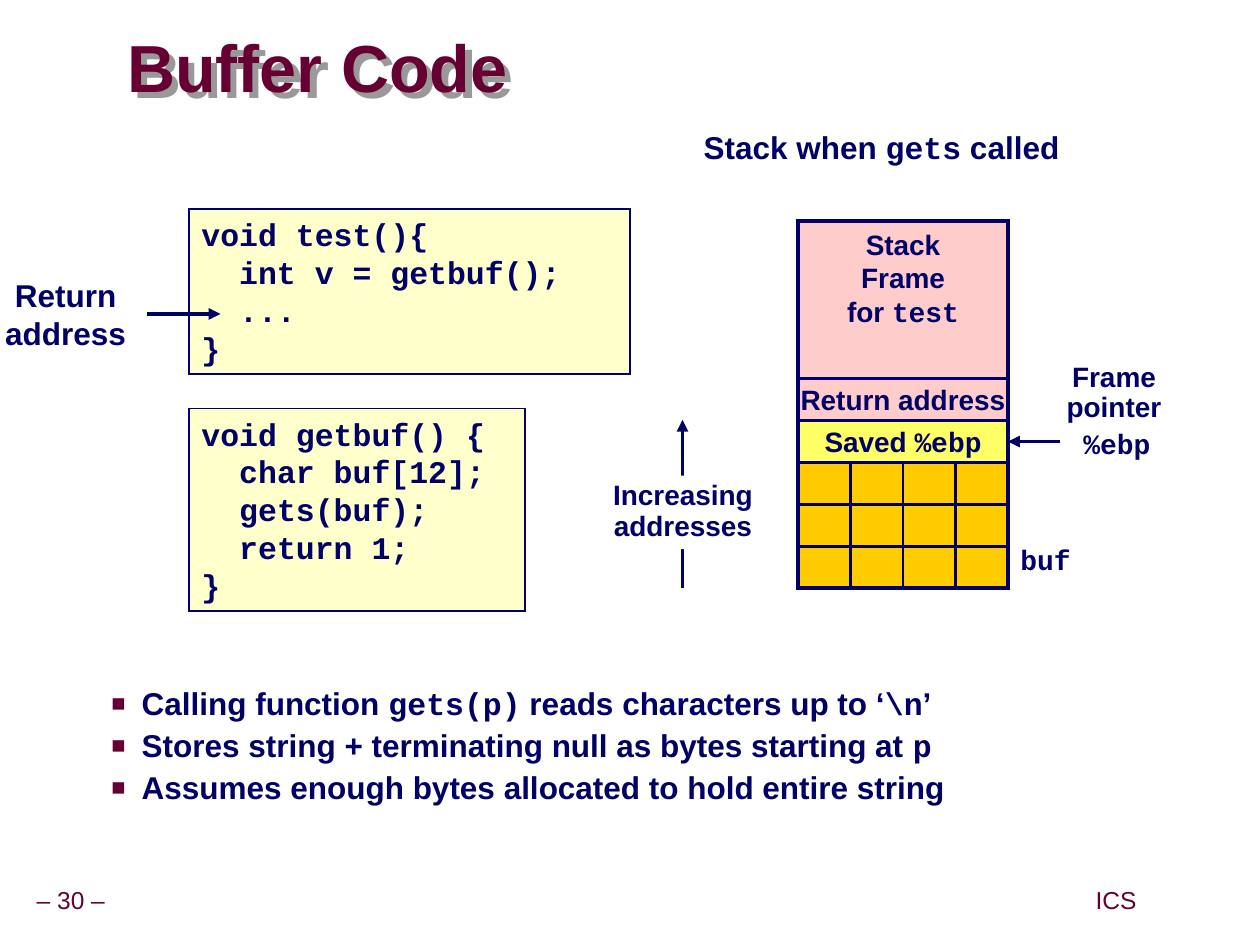
import itertools
from dataclasses import dataclass
from typing import Optional

import pptx
import pptx.dml.color
import pptx.enum.shapes
import pptx.enum.text
import pptx.oxml
import pptx.oxml.ns
import pptx.util

Align = pptx.enum.text.PP_ALIGN
Anchor = pptx.enum.text.MSO_ANCHOR
A_NS = pptx.oxml.ns.nsdecls("a")

COLORS = {
    "navy": "000066", "maroon": "660033", "cream": "FFFFCC", "pink": "FFCCCC",
    "yellow": "FFFF66", "gold": "FFCC00", "white": "FFFFFF", "gray": "999999",
}
SANS, MONO = "Arial", "Courier New"

# The slide is a grid of 120 columns by 90 rows
COLUMNS, ROWS = 120, 90
WIDTH, HEIGHT = pptx.util.Inches(10), pptx.util.Inches(7.5)


@dataclass
class Block:
    """A box on the grid; text between backticks is set in the code font."""
    left: float
    top: float
    width: float
    height: float
    text: str = ""
    size: float = 16
    color: str = "navy"
    bold: bool = True
    align: Align = Align.CENTER
    anchor: Anchor = Anchor.TOP
    spacing: float = 1.0
    inset: float = 0.1
    wrap: bool = False
    fill: Optional[str] = None
    line: float = 0


@dataclass
class Arrow:
    start: tuple
    end: tuple


def x(columns: float) -> int:
    return round(WIDTH * columns / COLUMNS)


def y(rows: float) -> int:
    return round(HEIGHT * rows / ROWS)


def rgb(name: str) -> pptx.dml.color.RGBColor:
    return pptx.dml.color.RGBColor.from_string(COLORS[name])


def write_text(frame, block: Block) -> None:
    frame.word_wrap = block.wrap
    frame.vertical_anchor = block.anchor
    frame.margin_left = frame.margin_right = pptx.util.Inches(block.inset)
    frame.margin_top = frame.margin_bottom = pptx.util.Inches(min(block.inset, 0.05))
    for number, line in enumerate(block.text.split("\n")):
        paragraph = frame.add_paragraph() if number else frame.paragraphs[0]
        paragraph.alignment = block.align
        paragraph.line_spacing = block.spacing
        for part, words in enumerate(line.split("`")):
            if not words:
                continue
            run = paragraph.add_run()
            run.text = words
            run.font.size = pptx.util.Pt(block.size)
            run.font.bold = block.bold
            run.font.color.rgb = rgb(block.color)
            run.font.name = MONO if part % 2 else SANS


def draw_block(slide, block: Block):
    place = x(block.left), y(block.top), x(block.width), y(block.height)
    if block.fill or block.line:
        shape = slide.shapes.add_shape(pptx.enum.shapes.MSO_SHAPE.RECTANGLE, *place)
        shape.shadow.inherit = False
        if block.fill:
            shape.fill.solid()
            shape.fill.fore_color.rgb = rgb(block.fill)
        else:
            shape.fill.background()
        if block.line:
            shape.line.color.rgb = rgb("navy")
            shape.line.width = pptx.util.Pt(block.line)
            shape.line._get_or_add_ln().append(
                pptx.oxml.parse_xml(f'<a:miter {A_NS} lim="800000"/>'))
        else:
            shape.line.fill.background()
    else:
        shape = slide.shapes.add_textbox(*place)
    if block.text:
        write_text(shape.text_frame, block)
    return shape


def draw_arrow(slide, arrow: Arrow):
    connector = slide.shapes.add_connector(
        pptx.enum.shapes.MSO_CONNECTOR.STRAIGHT,
        x(arrow.start[0]), y(arrow.start[1]), x(arrow.end[0]), y(arrow.end[1]))
    connector.line.color.rgb = rgb("navy")
    connector.line.width = pptx.util.Pt(2.25)
    connector.line._get_or_add_ln().append(
        pptx.oxml.parse_xml(f'<a:tailEnd {A_NS} type="triangle"/>'))
    connector._element.spPr.append(pptx.oxml.parse_xml(f"<a:effectLst {A_NS}/>"))
    return connector


def add_shadow(shape) -> None:
    shape._element.spPr.append(pptx.oxml.parse_xml(
        f'<a:effectLst {A_NS}><a:outerShdw dist="63500" dir="2700000">'
        f'<a:srgbClr val="{COLORS["gray"]}"/></a:outerShdw></a:effectLst>'))


def add_square_bullet(paragraph) -> None:
    paragraph.space_before = pptx.util.Pt(4.5)
    properties = paragraph._p.get_or_add_pPr()
    properties.set("marL", str(pptx.util.Inches(0.61)))
    properties.set("indent", str(pptx.util.Inches(-0.24)))
    for tag in (f'<a:buClr {A_NS}><a:srgbClr val="{COLORS["maroon"]}"/></a:buClr>',
                f'<a:buSzPct {A_NS} val="75000"/>',
                f'<a:buFont {A_NS} typeface="{SANS}"/>',
                f'<a:buChar {A_NS} char="■"/>'):
        properties.append(pptx.oxml.parse_xml(tag))


def code_block(top: float, width: float, height: float, code: str) -> Block:
    text = "\n".join(f"`{line}`" for line in code.split("\n"))
    return Block(18, top, width, height, text, size=18, align=Align.LEFT,
                 wrap=True, fill="cream", line=1)


def draw_stack(slide) -> None:
    left, top, width, frame_height, row, column = 76, 21.05, 20, 15, 4, 5
    return_top = top + frame_height
    saved_top, buffer_top = return_top + row, return_top + 2 * row
    right, saved_middle = left + width, saved_top + row / 2

    # Frame of the caller, return address and saved pointer
    draw_block(slide, Block(left, return_top, width, row, "Return address",
                            anchor=Anchor.MIDDLE, fill="pink", line=1.5))
    saved = draw_block(slide, Block(left, saved_top, width, row, "Saved `%ebp`",
                                    anchor=Anchor.MIDDLE, fill="yellow", line=1.5))
    draw_block(slide, Block(left, top, width, frame_height,
                            "Stack\nFrame\nfor `test`", fill="pink", line=2.25))

    # Buffer, outline of the stack, and the twelve bytes
    draw_block(slide, Block(left, buffer_top, width, 3 * row, fill="gold", line=1.5))
    draw_block(slide, Block(left, top, width, frame_height + 5 * row, line=2.25))
    for i, j in itertools.product(range(3), range(4)):
        draw_block(slide, Block(left + j * column, buffer_top + i * row,
                                column, row, line=1.5))

    # Labels beside the stack
    draw_block(slide, Block(right, buffer_top + 1.75 * row, 7.2, 4.4, "`buf`", align=Align.LEFT))
    draw_block(slide, Block(102, saved_top, 8.9, 4.4, "`%ebp`", align=Align.LEFT))
    draw_block(slide, Block(100, 34, 12.2, 7, "Frame\npointer", spacing=0.9, inset=0.05))
    pointer = draw_arrow(slide, Arrow((right + column, saved_middle), (right, saved_middle)))
    pointer.end_connect(saved, 3)


def main() -> None:
    deck = pptx.Presentation()
    deck.slide_width, deck.slide_height = WIDTH, HEIGHT
    slide = deck.slides.add_slide(deck.slide_layouts[6])

    # Footer
    for left, width, text in ((2.8, 7.9, "– 30 –"), (103.7, 5.2, "ICS")):
        draw_block(slide, Block(left, 84, width, 3.7, text, size=14, color="maroon",
                                bold=False, anchor=Anchor.MIDDLE, spacing=0.9, inset=0.05))

    # Title and heading
    title = draw_block(slide, Block(12.1, 3, 101.9, 7.6, "Buffer Code", size=38,
                                    color="maroon", align=Align.LEFT, anchor=Anchor.MIDDLE,
                                    spacing=0.87, inset=0, wrap=True))
    add_shadow(title)
    draw_block(slide, Block(66.4, 12, 35.1, 4.4, "Stack when `gets` called",
                            size=18, spacing=0.9, inset=0.05))

    # Code with the return address marked
    draw_block(slide, code_block(38.9, 32, 19.3, "void getbuf() {\n  char buf[12];\n"
                                 "  gets(buf);\n  return 1;\n}"))
    draw_block(slide, code_block(19.9, 42, 15.7,
                                 "void test(){\n  int v = getbuf();\n  ...\n}"))
    draw_block(slide, Block(-0.75, 25.7, 14, 8.4, "Return\naddress", size=18,
                            anchor=Anchor.MIDDLE))
    draw_arrow(slide, Arrow((14, 29.9), (21, 29.9)))

    # Stack and the direction of its addresses
    draw_stack(slide)
    draw_arrow(slide, Arrow((65, 56), (65, 40)))
    draw_block(slide, Block(57.8, 45.3, 14.5, 7, "Increasing\naddresses",
                            spacing=0.9, inset=0.05, fill="white"))

    # Remarks
    remarks = draw_block(slide, Block(
        5, 65, 108.4, 17, "Calling function `gets(p)` reads characters up to ‘`\\n`’\n"
        "Stores string + terminating null as bytes starting at `p`\n"
        "Assumes enough bytes allocated to hold entire string",
        size=18, align=Align.LEFT, spacing=0.9, wrap=True))
    for paragraph in remarks.text_frame.paragraphs:
        add_square_bullet(paragraph)

    deck.save("out.pptx")


if __name__ == "__main__":
    main()
